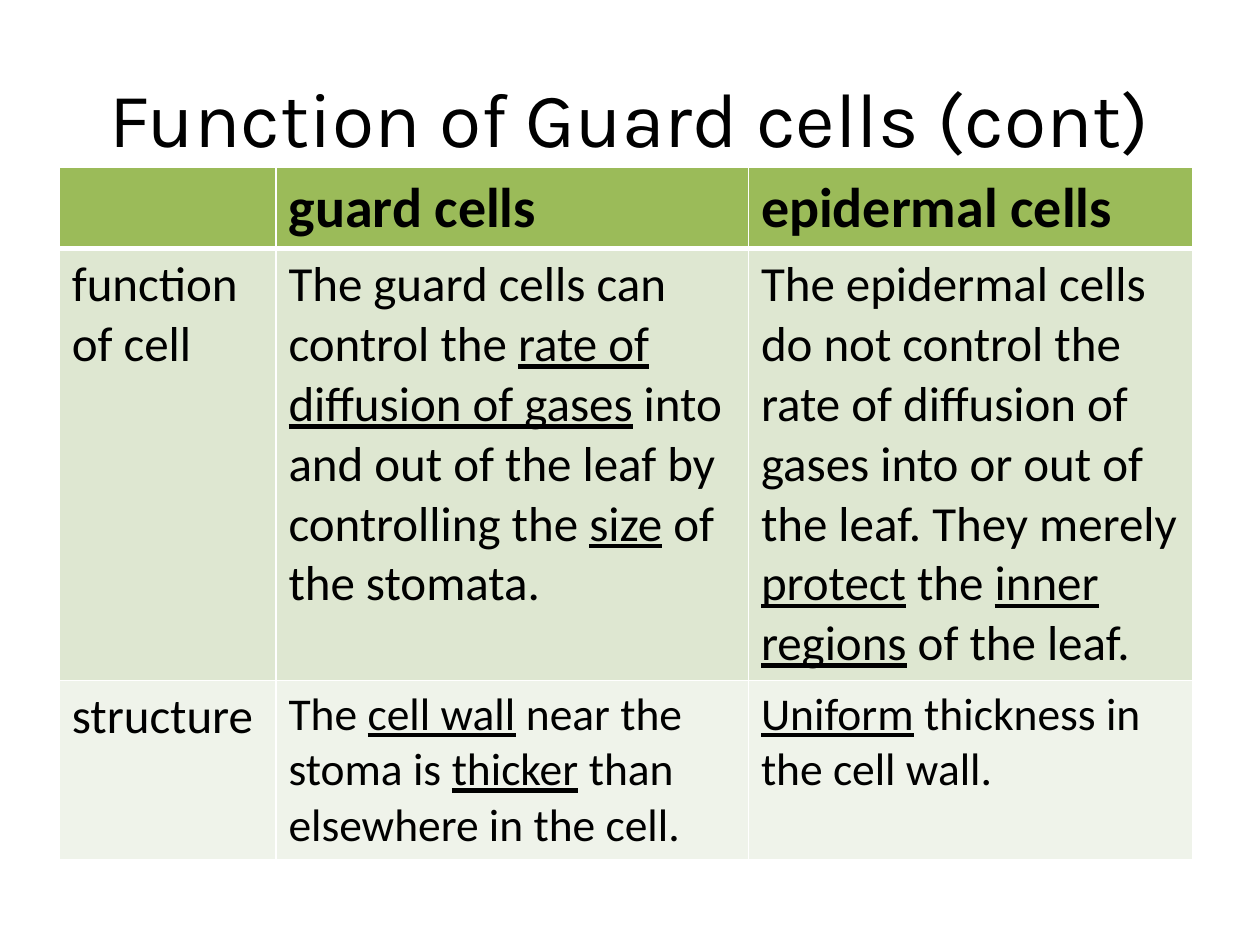
from lxml import etree
from pptx import Presentation
from pptx.dml.color import RGBColor
from pptx.enum.text import MSO_ANCHOR, PP_ALIGN
from pptx.oxml.ns import qn
from pptx.util import Inches, Pt

MIDDLE = MSO_ANCHOR.MIDDLE
CENTER = PP_ALIGN.CENTER

COLORS = {"text": "000000", "border": "FFFFFF"}
TITLE = "Function of Guard cells (cont)"
UNDERLINE = "_"
ROWS = [
    {"fill": "9BBB59", "sizes": (32, 32, 32), "bold": True, "top": 1, "bottom": 3,
     "cells": ("", "guard cells", "epidermal cells")},
    {"fill": "DEE7D1", "sizes": (28, 28, 28), "bold": False, "top": 3, "bottom": 1,
     "cells": (
         "function of cell",
         "The guard cells can control the _rate of diffusion of gases_ into and out of "
         "the leaf by controlling the _size_ of the stomata.",
         "The epidermal cells do not control the rate of diffusion of gases into or out "
         "of the leaf. They merely _protect_ the _inner regions_ of the leaf.")},
    {"fill": "EFF3EA", "sizes": (28, 26, 26), "bold": False, "top": 1, "bottom": 1,
     "cells": (
         "structure",
         "The _cell wall_ near the stoma is _thicker_ than elsewhere in the cell.",
         "_Uniform_ thickness in the cell wall.")},
]
COL_WIDTHS = (1.72, 3.75, 3.53)
ROW_HEIGHT = 0.41


def set_font(p, name, size, bold=False):
    p.font.name = name
    p.font.size = Pt(size)
    p.font.bold = bold
    p.font.color.rgb = RGBColor.from_string(COLORS["text"])


def set_borders(cell, top, bottom):
    tc_pr = cell._tc.get_or_add_tcPr()
    for side, width in (("L", 1), ("R", 1), ("T", top), ("B", bottom)):
        ln = etree.SubElement(tc_pr, qn(f"a:ln{side}"), w=str(Pt(width)))
        fill = etree.SubElement(ln, qn("a:solidFill"))
        etree.SubElement(fill, qn("a:srgbClr"), val=COLORS["border"])


def fill_cell(cell, text, size, row):
    set_borders(cell, row["top"], row["bottom"])
    cell.fill.solid()
    cell.fill.fore_color.rgb = RGBColor.from_string(row["fill"])
    p = cell.text_frame.paragraphs[0]
    set_font(p, "Calibri", size, row["bold"])
    for i, part in enumerate(text.split(UNDERLINE)):
        if part:
            r = p.add_run()
            r.text = part
            r.font.size = Pt(size)
            r.font.name = "Calibri"
            r.font.bold = row["bold"]
            r.font.color.rgb = RGBColor.from_string(COLORS["text"])
            if i % 2:
                r.font.underline = True


def add_title(s):
    sp = s.shapes.title
    sp.left, sp.top, sp.width, sp.height = (Inches(v) for v in (0.5, 0.3, 9, 1.25))
    tf = sp.text_frame
    tf.text = TITLE
    tf.vertical_anchor = MIDDLE
    p = tf.paragraphs[0]
    p.alignment = CENTER
    set_font(p, "Karla", 44)


def add_cell_table(s):
    table = s.shapes.add_table(
        len(ROWS), len(COL_WIDTHS), Inches(0.47), Inches(1.33),
        Inches(sum(COL_WIDTHS)), Inches(ROW_HEIGHT * len(ROWS))).table
    for col, width in zip(table.columns, COL_WIDTHS):
        col.width = Inches(width)
    for r, row in enumerate(ROWS):
        table.rows[r].height = Inches(ROW_HEIGHT)
        for c, (text, size) in enumerate(zip(row["cells"], row["sizes"])):
            fill_cell(table.cell(r, c), text, size, row)


def main():
    prs = Presentation()
    prs.slide_width, prs.slide_height = Inches(10), Inches(7.5)
    s = prs.slides.add_slide(prs.slide_layouts[5])
    add_title(s)
    add_cell_table(s)
    prs.save("out.pptx")


if __name__ == "__main__":
    main()
